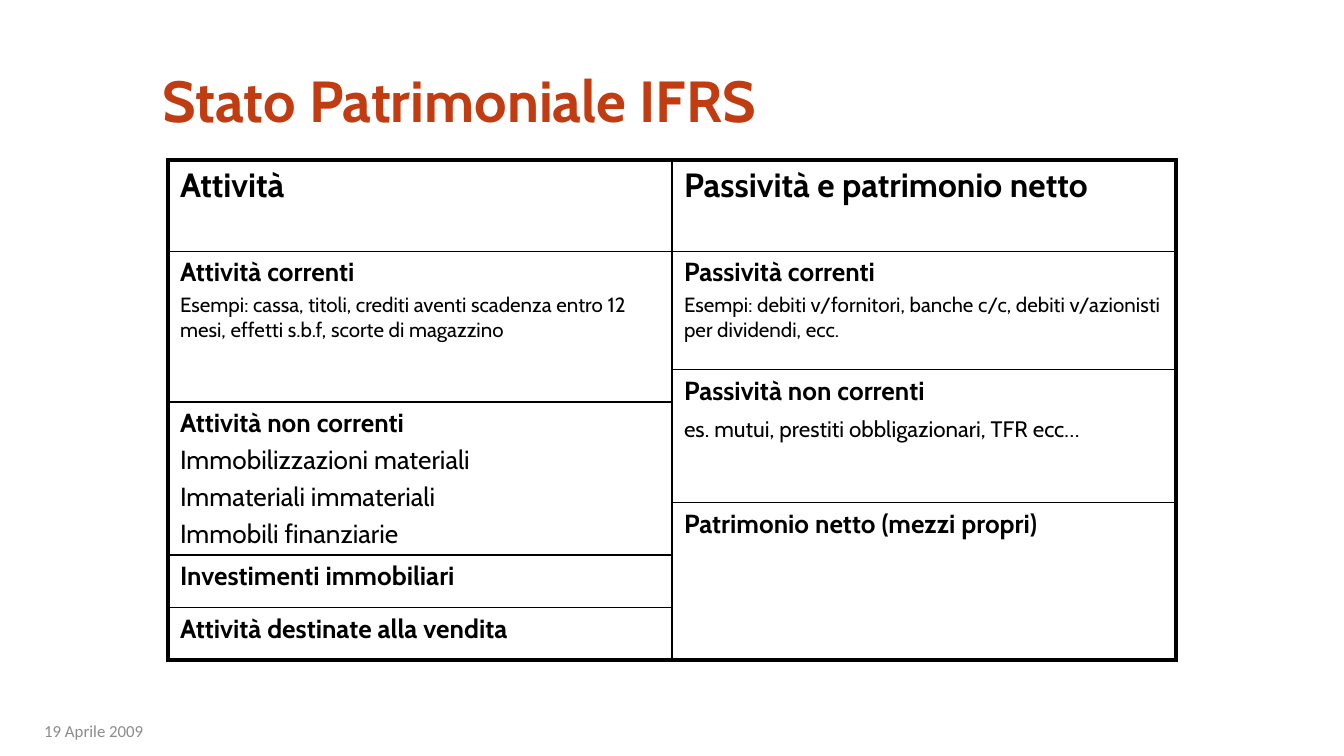
from dataclasses import dataclass

from lxml.etree import SubElement
from pptx import Presentation
from pptx.dml.color import RGBColor
from pptx.enum.text import MSO_ANCHOR as Anchor
from pptx.oxml.ns import qn
from pptx.util import Inches, Pt


@dataclass(frozen=True)
class Theme:
    heading_font: str = "Cabin"
    date_font: str = "Calibri"
    accent: str = "C23C12"
    ink: str = "000000"
    muted: str = "8C8C8C"
    title: float = 31
    header: float = 18
    body: float = 14
    example: float = 12
    note: float = 11
    date: float = 9
    outer_line: float = 2.25
    inner_line: float = 1


THEME = Theme()
HEADER = dict(size=THEME.header, bold=True)
HEADING = dict(size=THEME.body, bold=True)
ITEM = dict(size=THEME.body, before=2.8)
NOTE = dict(size=THEME.note, before=2.2)
EXAMPLE = dict(size=THEME.example, before=4.8)

COLUMN_WIDTHS = [3.75, 3.75]
ROW_HEIGHTS = [0.68, 0.88, 0.24, 0.75, 0.39, 0.39, 0.39]
ENTRIES = [
    (0, 0, 1, [("Attività", HEADER)]),
    (0, 1, 1, [("Passività e patrimonio netto", HEADER)]),
    (1, 0, 2, [
        ("Attività correnti", HEADING),
        ("Esempi: cassa, titoli, crediti aventi scadenza entro 12 mesi, "
         "effetti s.b.f, scorte di magazzino", NOTE),
    ]),
    (1, 1, 1, [
        ("Passività correnti", HEADING),
        ("Esempi: debiti v/fornitori, banche c/c, debiti v/azionisti "
         "per dividendi, ecc.", NOTE),
    ]),
    (2, 1, 2, [
        ("Passività non correnti", HEADING),
        ("es. mutui, prestiti obbligazionari, TFR ecc…", EXAMPLE),
    ]),
    (3, 0, 2, [
        ("Attività non correnti", HEADING),
        ("Immobilizzazioni materiali", ITEM),
        ("Immateriali immateriali", ITEM),
        ("Immobili finanziarie", ITEM),
    ]),
    (4, 1, 3, [("Patrimonio netto (mezzi propri)", HEADING)]),
    (5, 0, 1, [("Investimenti immobiliari", HEADING)]),
    (6, 0, 1, [("Attività destinate alla vendita", HEADING)]),
]


def write(paragraph, text, *, size, font=THEME.heading_font, color=THEME.ink,
          bold=False, before=0):
    """Put one formatted run of text into a paragraph."""
    paragraph.space_before = Pt(before)
    run = paragraph.add_run()
    run.text = text
    run.font.name = font
    run.font.size = Pt(size)
    run.font.bold = bold
    run.font.color.rgb = RGBColor.from_string(color)


class SlideBuilder:
    def __init__(self, slide, theme):
        self.slide = slide
        self.theme = theme

    def set_margins(self, target):
        target.margin_left = target.margin_right = Inches(0.09)
        target.margin_top = target.margin_bottom = Inches(0.04)

    def text_box(self, box, text, anchor, tight=False, **style):
        shape = self.slide.shapes.add_textbox(*map(Inches, box))
        frame = shape.text_frame
        frame.word_wrap = True
        frame.vertical_anchor = anchor
        if tight:
            self.set_margins(frame)
        write(frame.paragraphs[0], text, **style)

    def border(self, cell, edges):
        properties = cell._tc.get_or_add_tcPr()
        for index, (side, outer) in enumerate(zip("LRTB", edges)):
            width = self.theme.outer_line if outer else self.theme.inner_line
            line = SubElement(properties, qn(f"a:ln{side}"), w=str(Pt(width)))
            fill = SubElement(line, qn("a:solidFill"))
            SubElement(fill, qn("a:srgbClr"), val=self.theme.ink)
            properties.insert(index, line)

    def table(self, left, top, widths, heights, entries):
        table = self.slide.shapes.add_table(
            len(heights), len(widths), Inches(left), Inches(top),
            Inches(sum(widths)), Inches(sum(heights))).table
        table.first_row = table.horz_banding = False
        for column, width in zip(table.columns, widths):
            column.width = Inches(width)
        for row, height in zip(table.rows, heights):
            row.height = Inches(height)

        for row, column, span, lines in entries:
            cell = table.cell(row, column)
            if span > 1:
                cell.merge(table.cell(row + span - 1, column))
            frame = cell.text_frame
            for index, (text, style) in enumerate(lines):
                paragraph = frame.add_paragraph() if index else frame.paragraphs[0]
                write(paragraph, text, **style)

        for row in range(len(heights)):
            for column in range(len(widths)):
                cell = table.cell(row, column)
                span = cell.span_height if cell.is_merge_origin else 1
                self.set_margins(cell)
                cell.fill.background()
                self.border(cell, (column == 0, column == len(widths) - 1,
                                   row == 0, row + span == len(heights)))


def main():
    """Build the balance sheet slide and save it."""
    presentation = Presentation()
    presentation.slide_width = Inches(10)
    presentation.slide_height = Inches(10) * 9 // 16
    slide = presentation.slides.add_slide(presentation.slide_layouts[6])
    builder = SlideBuilder(slide, THEME)
    builder.text_box((0.23, 5.31, 2.08, 0.25), "19 Aprile 2009", Anchor.MIDDLE,
                     size=THEME.date, font=THEME.date_font, color=THEME.muted)
    builder.text_box((1.12, 0.56, 7.75, 0.48), "Stato Patrimoniale IFRS",
                     Anchor.BOTTOM, tight=True, size=THEME.title,
                     color=THEME.accent, bold=True)
    builder.table(1.25, 1.19, COLUMN_WIDTHS, ROW_HEIGHTS, ENTRIES)
    presentation.save("out.pptx")


if __name__ == "__main__":
    main()
